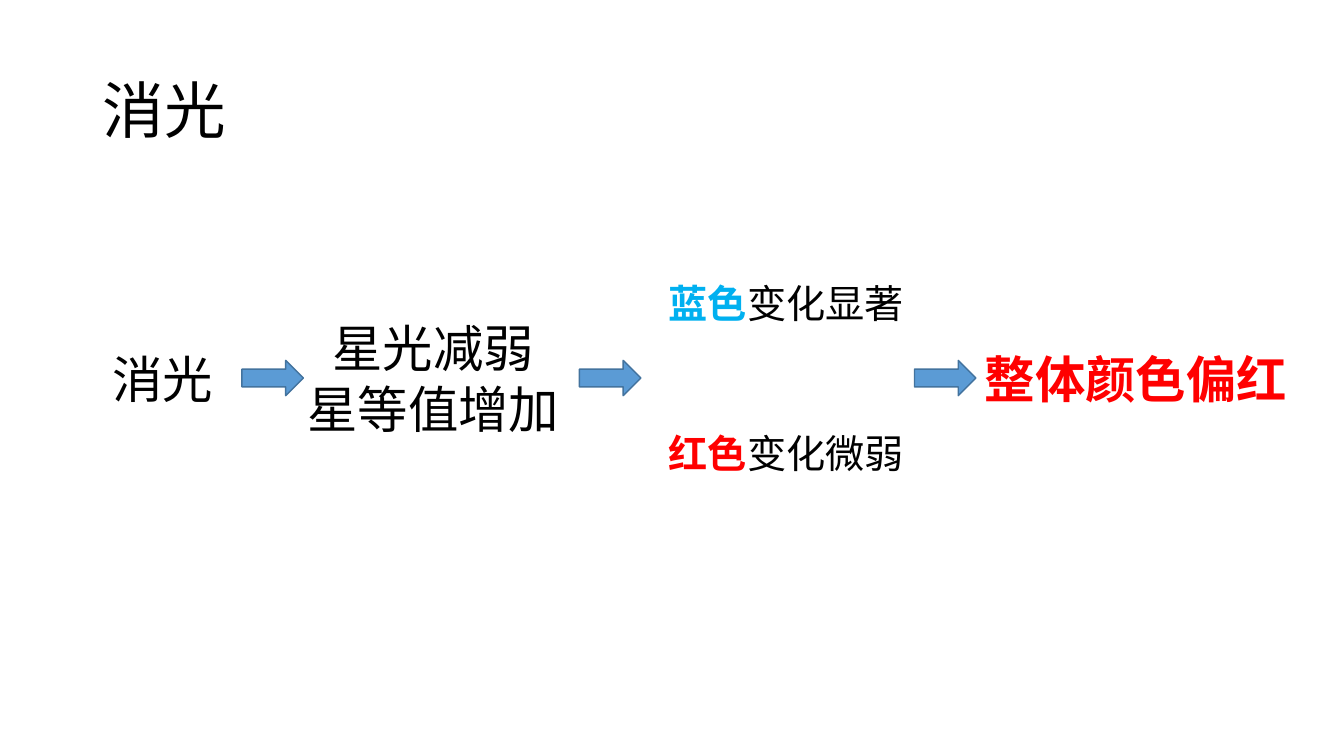
from dataclasses import dataclass

from lxml import etree
from pptx import Presentation
from pptx import util as u
from pptx.dml.color import RGBColor
from pptx.enum import shapes, text
from pptx.oxml.ns import qn


@dataclass(frozen=True)
class Theme:
    font: str = "Noto Sans CJK SC"
    black: str = "000000"
    blue: str = "00B0F0"
    red: str = "FF0000"
    arrow: str = "5B9BD5"
    arrow_line: str = "43739E"
    title: int = 44
    step: int = 36
    branch: int = 28


THEME = Theme()
WIDTH, HEIGHT = 13.33, 7.5


def add_text(s, box, lines, size, align=text.PP_ALIGN.CENTER, wrap=False):
    sp = s.shapes.add_textbox(*(u.Inches(v) for v in box))
    tf = sp.text_frame
    tf.word_wrap = wrap
    tf.vertical_anchor = text.MSO_ANCHOR.MIDDLE
    for i, line in enumerate(lines):
        p = tf.add_paragraph() if i else tf.paragraphs[0]
        p.alignment = align
        for words, color, bold in line:
            r = p.add_run()
            r.text = words
            r.font.size = u.Pt(size)
            r.font.bold = bold
            r.font.name = THEME.font
            r.font.color.rgb = RGBColor.from_string(color)
            ea = etree.SubElement(r.font._element, qn("a:ea"))
            ea.set("typeface", THEME.font)
    return sp


def add_arrow(s, left, middle, width=0.61, height=0.35):
    sp = s.shapes.add_shape(
        shapes.MSO_SHAPE.RIGHT_ARROW,
        *(u.Inches(v) for v in (left, middle - height / 2, width, height)),
    )
    sp.shadow.inherit = False
    sp.fill.solid()
    sp.fill.fore_color.rgb = RGBColor.from_string(THEME.arrow)
    sp.line.color.rgb = RGBColor.from_string(THEME.arrow_line)
    sp.line.width = u.Pt(1)


def add_title(s, box, words):
    sp = add_text(s, box, [[(words, THEME.black, False)]], THEME.title,
                  text.PP_ALIGN.LEFT, True)
    sp.text_frame.paragraphs[0].line_spacing = 0.9


def add_flow(s, box):
    left, top, width, height = box
    middle = top + height / 2
    steps = [
        (0, 1.21, 0.71, [[("消光", THEME.black, False)]]),
        (0.162, 2.73, 1.31, [[("星光减弱", THEME.black, False)],
                             [("星等值增加", THEME.black, False)]]),
        (0.728, 3.23, 0.71, [[("整体颜色偏红", THEME.red, True)]]),
    ]
    for share, w, h, lines in steps:
        add_text(s, (left + share * width, middle - h / 2, w, h), lines, THEME.step)

    branch_h = 0.57
    branches = [
        (top, "蓝色", THEME.blue, "变化显著"),
        (top + height - branch_h, "红色", THEME.red, "变化微弱"),
    ]
    for y, name, color, change in branches:
        add_text(s, (left + 0.464 * width, y, 2.56, branch_h),
                 [[(name, color, True), (change, THEME.black, False)]], THEME.branch)

    for share in (0.117, 0.399, 0.679):
        add_arrow(s, left + share * width, middle)


def main():
    prs = Presentation()
    prs.slide_width, prs.slide_height = u.Inches(WIDTH), u.Inches(HEIGHT)
    s = prs.slides.add_slide(prs.slide_layouts[6])
    add_title(s, (0.92, 0.4, 11.5, 1.45), "消光")
    add_flow(s, (1.01, 2.72, 11.87, 2.06))
    prs.save("out.pptx")


if __name__ == "__main__":
    main()
